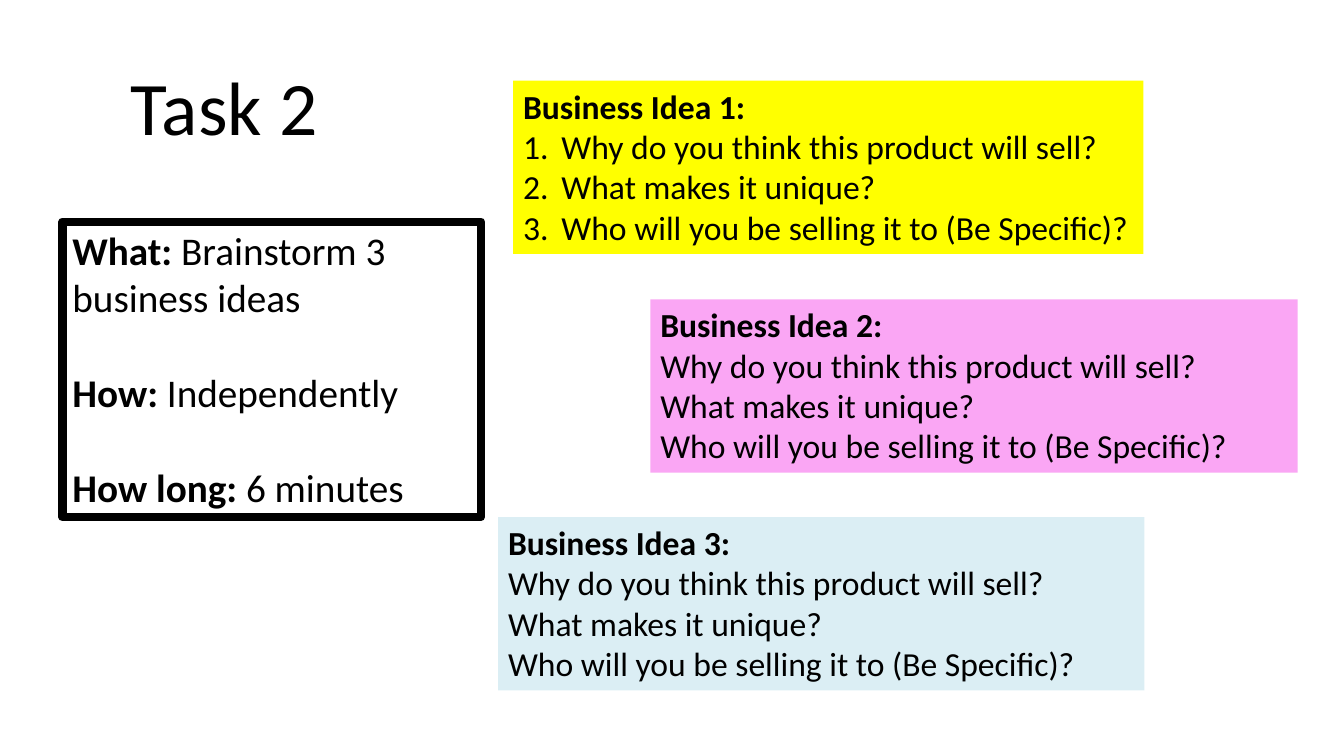
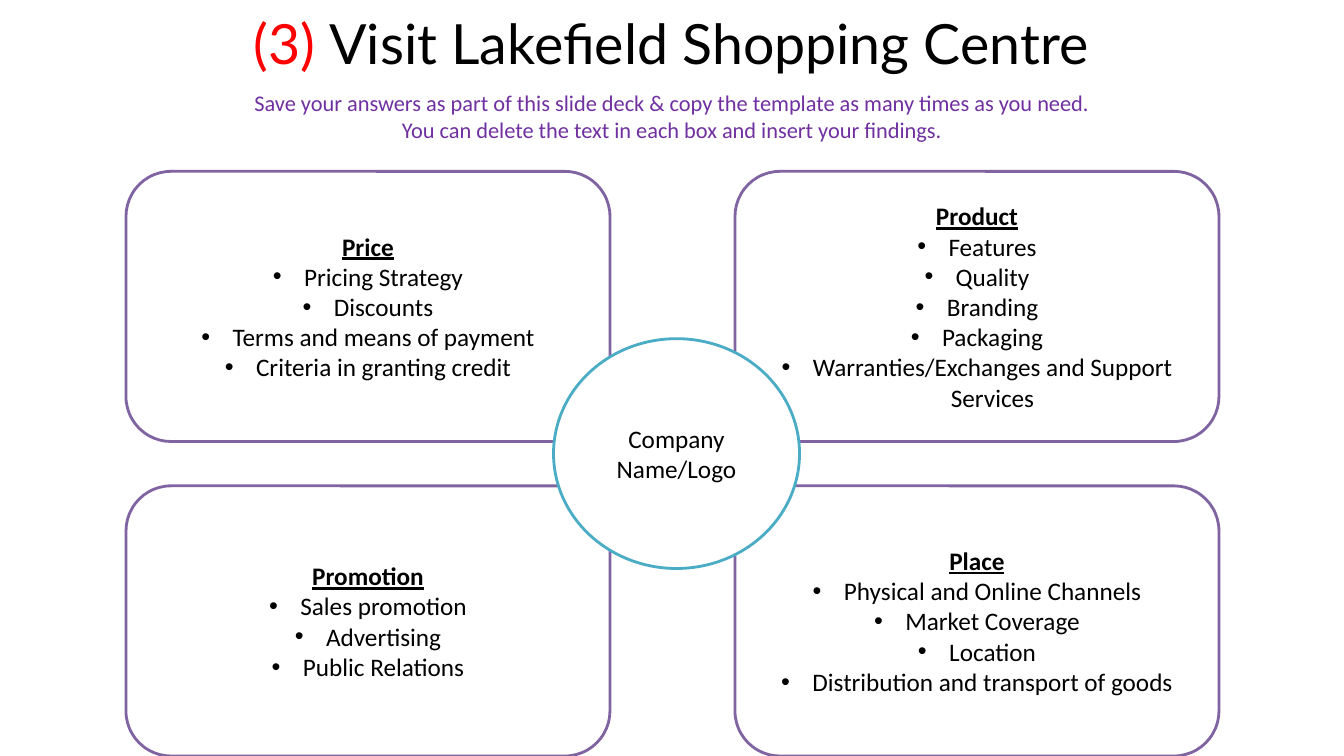
from dataclasses import dataclass
from typing import Optional

from lxml import etree
from pptx import Presentation
from pptx import util as u
from pptx.dml.color import RGBColor
from pptx.enum import shapes, text
from pptx.oxml.ns import qn

# Shared colours and formats
BLACK, WHITE, RED = "000000", "FFFFFF", "FF0000"
PURPLE, TEAL, VIOLET = "8064A2", "4BACC6", "7030A0"
YELLOW, PINK, PALE_BLUE = "FFFF00", "FAA6F4", "DBEEF4"
BODY_FONT, TITLE_FONT = "Calibri", "Lato"
LEFT, CENTER = text.PP_ALIGN.LEFT, text.PP_ALIGN.CENTER
TOP, MIDDLE = text.MSO_ANCHOR.TOP, text.MSO_ANCHOR.MIDDLE
RECT = shapes.MSO_SHAPE.RECTANGLE
ROUNDED = shapes.MSO_SHAPE.ROUNDED_RECTANGLE
OVAL = shapes.MSO_SHAPE.OVAL
NUMBER = ("buAutoNum", {"type": "arabicPeriod"})
BULLET = ("buChar", {"char": "•"})


@dataclass
class Span:
    words: str
    bold: bool = False
    underline: bool = False
    colour: str = BLACK


@dataclass
class Para:
    spans: list[Span]
    marker: Optional[tuple] = None
    indent: float = 0
    before: float = 0


@dataclass
class Style:
    size: float
    font: str = BODY_FONT
    align: text.PP_ALIGN = LEFT
    anchor: text.MSO_ANCHOR = TOP


@dataclass
class Idea:
    left: float
    top: float
    width: float
    colour: str
    marker: Optional[tuple] = None


@dataclass
class Card:
    heading: str
    column: int
    row: int
    points: list[str]


IDEA_STYLE = Style(24)
TASK_STYLE = Style(28)
CARD_STYLE = Style(18, align=CENTER, anchor=MIDDLE)
NOTE_STYLE = Style(16, align=CENTER)
TASK_TITLE = Style(54)
VISIT_TITLE = Style(39.6, TITLE_FONT, CENTER, MIDDLE)

QUESTIONS = ["Why do you think this product will sell?", "What makes it unique?",
             "Who will you be selling it to (Be Specific)?"]
IDEAS = [Idea(5.09, 0.8, 6.25, YELLOW, NUMBER), Idea(6.45, 2.97, 6.42, PINK),
         Idea(4.94, 5.13, 6.41, PALE_BLUE)]
TASK = [("What: ", "Brainstorm 3 business ideas"), ("How: ", "Independently"),
        ("How long: ", "6 minutes")]
NOTES = ["Save your answers as part of this slide deck & copy the template as many times as you need.",
         "You can delete the text in each box and insert your findings."]
CARDS = [
    Card("Price", 0, 0, ["Pricing Strategy", "Discounts", "Terms and means of payment",
                         "Criteria in granting credit"]),
    Card("Promotion", 0, 1, ["Sales promotion", "Advertising", "Public Relations"]),
    Card("Product", 1, 0, ["Features", "Quality", "Branding", "Packaging",
                           "Warranties/Exchanges and Support Services"]),
    Card("Place", 1, 1, ["Physical and Online Channels", "Market Coverage", "Location",
                         "Distribution and transport of goods"]),
]


def rgb(value: str) -> RGBColor:
    return RGBColor.from_string(value)


def add_marker(para, marker: tuple, indent: float) -> None:
    properties = para._p.get_or_add_pPr()
    properties.set("marL", str(u.Inches(indent)))
    properties.set("indent", str(-u.Inches(indent)))
    tag, values = marker
    if marker is BULLET:
        etree.SubElement(properties, qn("a:buFont"), {"typeface": "Arial"})
    etree.SubElement(properties, qn(f"a:{tag}"), values)


def write(box, paras: list[Para], style: Style) -> None:
    frame = box.text_frame
    frame.word_wrap = True
    frame.vertical_anchor = style.anchor
    for index, item in enumerate(paras):
        para = frame.add_paragraph() if index else frame.paragraphs[0]
        para.alignment = style.align
        if item.before:
            para.space_before = u.Pt(item.before)
        if item.marker:
            add_marker(para, item.marker, item.indent)
        for part in item.spans:
            span = para.add_run()
            span.text = part.words
            span.font.color.rgb = rgb(part.colour)
            formats = {"name": style.font, "size": u.Pt(style.size),
                       "bold": part.bold, "underline": part.underline}
            for name, value in formats.items():
                setattr(span.font, name, value)


def add_label(page, place: tuple, paras: list[Para], style: Style) -> None:
    write(page.shapes.add_textbox(*map(u.Inches, place)), paras, style)


def add_box(page, kind, place: tuple, paras: list[Para], style: Style,
            fill: Optional[str] = None, line: Optional[str] = None, weight: float = 2) -> None:
    box = page.shapes.add_shape(kind, *map(u.Inches, place))
    box.shadow.inherit = False
    if fill:
        box.fill.solid()
        box.fill.fore_color.rgb = rgb(fill)
    else:
        box.fill.background()
    if line:
        box.line.color.rgb = rgb(line)
        box.line.width = u.Pt(weight)
        etree.SubElement(box.line._get_or_add_ln(), qn("a:round"))
    else:
        box.line.fill.background()
    write(box, paras, style)


def build_task(page) -> None:
    # Three business ideas
    for number, idea in enumerate(IDEAS, 1):
        paras = [Para([Span(f"Business Idea {number}:", bold=True)])]
        paras += [Para([Span(question)], idea.marker, 0.38) for question in QUESTIONS]
        add_box(page, RECT, (idea.left, idea.top, idea.width, 1.72), paras, IDEA_STYLE, idea.colour)

    # Task frame and title
    paras = [Para([Span(label, bold=True), Span(answer)], before=34 if index else 0)
             for index, (label, answer) in enumerate(TASK)]
    add_box(page, RECT, (0.62, 2.2, 4.15, 2.93), paras, TASK_STYLE, line=BLACK, weight=6)
    add_label(page, (1.2, 0.54, 3, 1.01), [Para([Span("Task 2")])], TASK_TITLE)


def build_visit(page) -> None:
    # Title
    title = [Para([Span("(3) ", colour=RED), Span("Visit Lakefield Shopping Centre")])]
    add_label(page, (1.78, 0.1, 9.75, 0.64), title, VISIT_TITLE)

    # Four cards on a grid, then the circle in the middle
    for card in CARDS:
        paras = [Para([Span(card.heading, bold=True, underline=True)])]
        paras += [Para([Span(point)], BULLET, 0.31) for point in card.points]
        place = (1.25 + 6.04 * card.column, 1.7 + 3.12 * card.row, 4.8, 2.68)
        add_box(page, ROUNDED, place, paras, CARD_STYLE, WHITE, PURPLE)
    add_box(page, OVAL, (5.49, 3.36, 2.44, 2.28), [Para([Span("Company Name/Logo")])],
            CARD_STYLE, WHITE, TEAL)

    # Instructions
    add_label(page, (1.25, 0.84, 10.83, 0.64),
              [Para([Span(note, colour=VIOLET)]) for note in NOTES], NOTE_STYLE)


def main() -> None:
    deck = Presentation()
    deck.slide_width, deck.slide_height = u.Inches(13.33), u.Inches(7.5)
    for build in (build_task, build_visit):
        build(deck.slides.add_slide(deck.slide_layouts[6]))
    deck.save("out.pptx")


if __name__ == "__main__":
    main()
